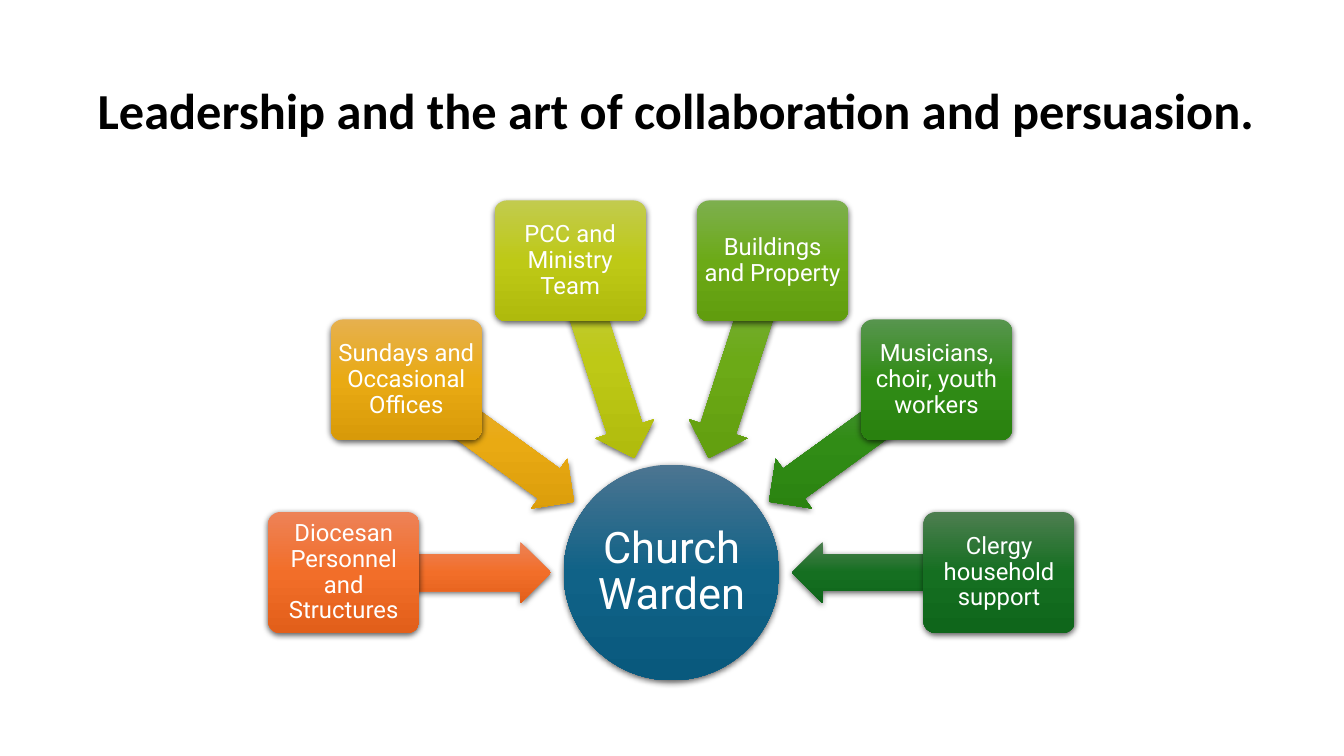
from dataclasses import dataclass
from math import cos, radians, sin

from lxml import etree
from pptx import Presentation
from pptx import util as u
from pptx.dml.color import RGBColor
from pptx.enum import shapes, text
from pptx.oxml import parse_xml
from pptx.oxml.ns import nsdecls, qn

PX = 9144  # EMU in one px, 100 px to the inch


@dataclass(frozen=True)
class Theme:
    ink: str = "000000"
    white: str = "FFFFFF"
    hub: tuple = ("4C7591", "106287", "09597D")
    head: str = "Calibri"
    body: str = "Roboto"
    big: int = 36
    mid: int = 31
    small: int = 17


@dataclass(frozen=True)
class Role:
    label: str
    shades: tuple


THEME = Theme()
ROLES = [
    Role("Diocesan Personnel and Structures", ("ED8257", "F26E29", "E25F1A")),
    Role("Sundays and Occasional Offices", ("E6B04E", "E9AA13", "D89A09")),
    Role("PCC and Ministry Team", ("C2CB4E", "BEC916", "AFBA0C")),
    Role("Buildings and Property", ("7DAF4E", "6CAA17", "619D0E")),
    Role("Musicians, choir, youth workers", ("57954E", "318C16", "29810F")),
    Role("Clergy household support", ("4D7E50", "156F21", "0F661B")),
]

# The hub's centre, and how far out the arrows and boxes sit
MID_X, MID_Y = 666, 568
HUB, NEAR, FAR = 214, 222, 325
BOX_W, BOX_H = 150, 120
ARROW_W, ARROW_H = 205, 61


def px(n: float) -> u.Emu:
    return u.Emu(round(n * PX))


def style(shape, shades: tuple) -> None:
    """Give a shape an upright three-stop gradient and a soft shadow."""
    shape.line.fill.background()
    stops = "".join(
        f'<a:gs pos="{i * 50000}"><a:srgbClr val="{shade}"/></a:gs>'
        for i, shade in enumerate(shades))
    fill = parse_xml(
        f'<a:gradFill {nsdecls("a")} rotWithShape="0"><a:gsLst>{stops}</a:gsLst>'
        '<a:lin ang="5400000" scaled="0"/></a:gradFill>')
    props = shape.fill._xPr
    props.find(qn("a:prstGeom")).addnext(fill)

    shape.shadow.inherit = False
    cast = etree.SubElement(
        props.find(qn("a:effectLst")), qn("a:outerShdw"),
        blurRad=str(u.Pt(4.5)), dist=str(u.Pt(1.5)), dir="5400000",
        algn="ctr", rotWithShape="0")
    tone = etree.SubElement(cast, qn("a:srgbClr"), val=THEME.ink)
    etree.SubElement(tone, qn("a:alpha"), val="63000")


def put(slide, kind, x: float, y: float, w: int, h: int, shades: tuple):
    """Add a styled shape centred on x, y."""
    shape = slide.shapes.add_shape(
        kind, px(x - w / 2), px(y - h / 2), px(w), px(h))
    style(shape, shades)
    return shape


def write(shape, words: str, font: str, size: int, tint: str,
          align=text.PP_ALIGN.CENTER, inset: tuple = (4, 4), bold: bool = False) -> None:
    frame = shape.text_frame
    frame.text = words
    frame.word_wrap = True
    frame.vertical_anchor = text.MSO_ANCHOR.MIDDLE
    frame.margin_left = frame.margin_right = px(inset[0])
    frame.margin_top = frame.margin_bottom = px(inset[1])
    para = frame.paragraphs[0]
    para.alignment = align
    para.line_spacing = 0.9
    face = para.runs[0].font
    face.name, face.size, face.bold = font, u.Pt(size), bold
    face.color.rgb = RGBColor.from_string(tint)


def spoke(slide, role: Role, turn: int) -> None:
    """Draw one box and its arrow to the hub, at a clockwise turn from the left."""
    dx, dy = cos(radians(turn)), sin(radians(turn))
    arrow = put(slide, shapes.MSO_SHAPE.LEFT_ARROW, MID_X + NEAR * dx,
                MID_Y + NEAR * dy, ARROW_W, ARROW_H, role.shades)
    arrow.adjustments[0], arrow.adjustments[1] = 0.6, 0.5
    arrow.rotation = turn % 360
    box = put(slide, shapes.MSO_SHAPE.ROUNDED_RECTANGLE, MID_X + FAR * dx,
              MID_Y + FAR * dy, BOX_W, BOX_H, role.shades)
    box.adjustments[0] = 0.1
    write(box, role.label, THEME.body, THEME.small, THEME.white)


def main() -> None:
    deck = Presentation()
    deck.slide_width, deck.slide_height = px(1333), px(750)
    slide = deck.slides.add_slide(deck.slide_layouts[6])

    # Title
    title = slide.shapes.add_textbox(px(87), px(40), px(1171), px(145))
    write(title, "Leadership and the art of collaboration and persuasion.",
          THEME.head, THEME.big, THEME.ink, text.PP_ALIGN.LEFT, (10, 5), True)

    # Hub
    hub = put(slide, shapes.MSO_SHAPE.OVAL, MID_X, MID_Y, HUB, HUB, THEME.hub)
    write(hub, "Church Warden", THEME.body, THEME.mid, THEME.white, inset=(2, 2))

    # Spokes, spread evenly over the upper half circle
    step = 180 // (len(ROLES) - 1)
    for i, role in enumerate(ROLES):
        spoke(slide, role, 180 + i * step)

    deck.save("out.pptx")


if __name__ == "__main__":
    main()
